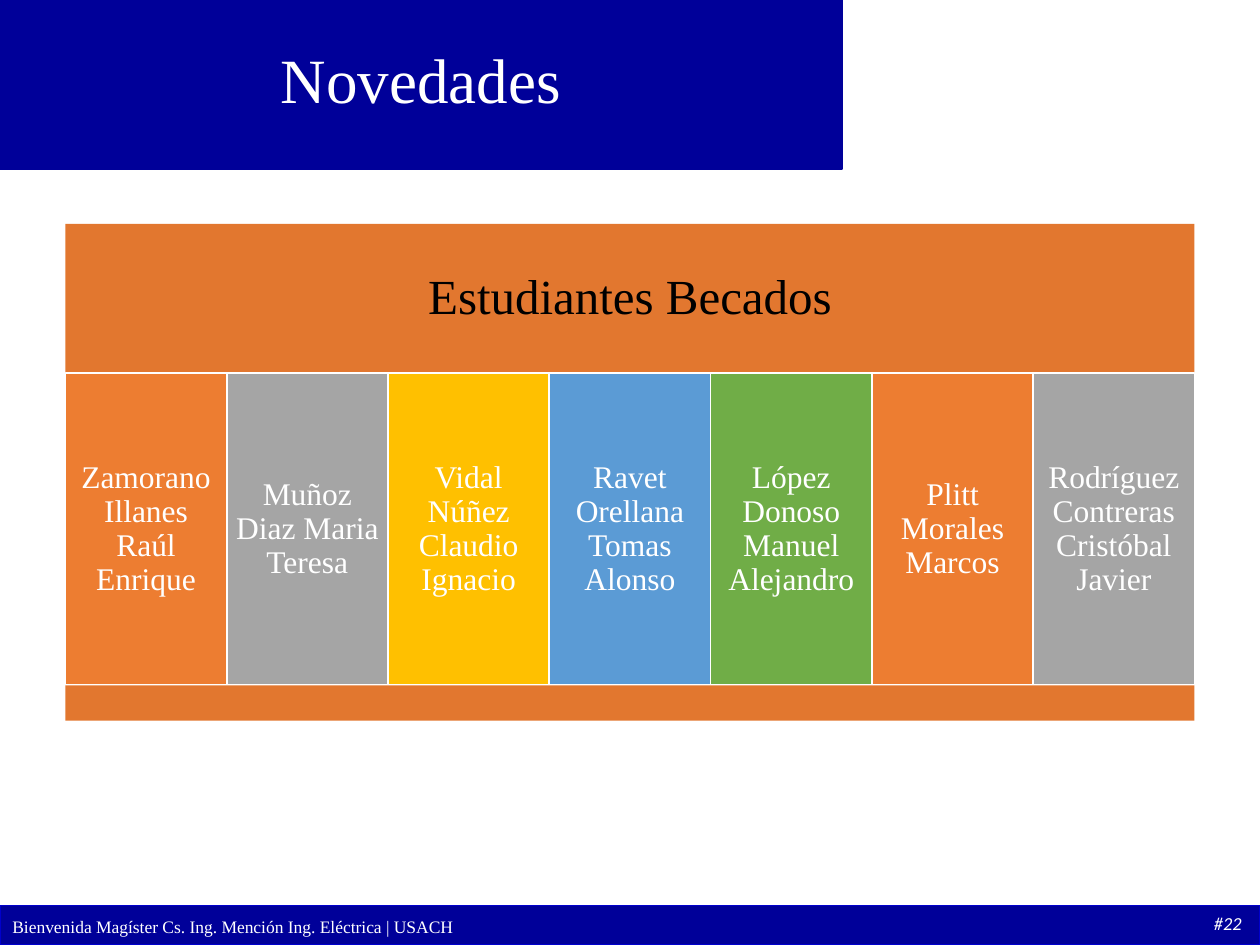
from pptx import Presentation
from pptx.dml.color import RGBColor
from pptx.enum.shapes import MSO_SHAPE
from pptx.enum.text import MSO_ANCHOR, PP_ALIGN
from pptx.util import Pt

RECTANGLE = MSO_SHAPE.RECTANGLE
TOP, MIDDLE = MSO_ANCHOR.TOP, MSO_ANCHOR.MIDDLE
LEFT, CENTER = PP_ALIGN.LEFT, PP_ALIGN.CENTER

NAVY, BLUE, WHITE, BLACK = "000099", "0000CC", "FFFFFF", "000000"
HEADER_ORANGE = "E2772F"
COLUMN_COLORS = ["ED7D31", "A5A5A5", "FFC000", "5B9BD5", "70AD47"]

TITLE = "Novedades"
HEADING = "Estudiantes Becados"
STUDENTS = [
    "Zamorano Illanes Raúl Enrique",
    "Muñoz Diaz Maria Teresa",
    "Vidal Núñez Claudio Ignacio",
    "Ravet Orellana Tomas Alonso",
    "López Donoso Manuel Alejandro",
    "Plitt Morales Marcos",
    "Rodríguez Contreras Cristóbal Javier",
]
FOOTER = "Bienvenida Magíster Cs. Ing. Mención Ing. Eléctrica | USACH"
PAGE_NUMBER = "#22"

SLIDE_WIDTH, SLIDE_HEIGHT = 720, 540
TITLE_WIDTH, TITLE_HEIGHT = 481, 94.5
BAND_HEIGHT, FOOTER_TOP = 96.5, 517.5
PANEL_LEFT, PANEL_WIDTH = 37.4, 645.2
HEADING_TOP, COLUMNS_TOP, BASE_TOP, PANEL_BOTTOM = 128, 213.2, 391.6, 411.8


def rgb(hex_color):
    return RGBColor.from_string(hex_color)


def add_box(slide, left, top, width, height, fill, line=None):
    box = slide.shapes.add_shape(
        RECTANGLE, Pt(left), Pt(top), Pt(width), Pt(height))
    box.shadow.inherit = False
    box.fill.solid()
    box.fill.fore_color.rgb = rgb(fill)
    if line:
        box.line.color.rgb = rgb(line)
        box.line.width = Pt(1)
    else:
        box.line.fill.background()
    return box


def write(shape, text, *, size, color=WHITE, font="Times New Roman", italic=False,
          align=CENTER, anchor=MIDDLE, spacing=0.9, inset=None, wrap=True):
    frame = shape.text_frame
    frame.word_wrap = wrap
    frame.vertical_anchor = anchor
    if inset is not None:
        frame.margin_left = frame.margin_right = Pt(inset)
        frame.margin_top = frame.margin_bottom = Pt(inset)
    paragraph = frame.paragraphs[0]
    paragraph.alignment = align
    paragraph.line_spacing = spacing
    run = paragraph.add_run()
    run.text = text
    run.font.size = Pt(size)
    run.font.name = font
    run.font.italic = italic
    run.font.color.rgb = rgb(color)


def add_title(slide):
    title = slide.shapes.title
    title.left, title.top = Pt(0), Pt(0)
    title.width, title.height = Pt(TITLE_WIDTH), Pt(TITLE_HEIGHT)
    write(title, TITLE, size=36)
    band = add_box(slide, 0, 0, TITLE_WIDTH, BAND_HEIGHT, NAVY, NAVY)
    title.element.addprevious(band.element)  # the band lies behind the title


def add_footer(slide):
    add_box(slide, 0, FOOTER_TOP, SLIDE_WIDTH, SLIDE_HEIGHT - FOOTER_TOP, NAVY, BLUE)
    footer = slide.shapes.add_textbox(Pt(0), Pt(520), Pt(664.6), Pt(19.4))
    write(footer, FOOTER, size=10, align=LEFT, anchor=TOP, spacing=1)
    number = slide.shapes.add_textbox(Pt(686.6), Pt(517.7), Pt(38), Pt(20))
    write(number, PAGE_NUMBER, size=10.5, font="Calibri", italic=True,
          align=LEFT, anchor=TOP, spacing=1, wrap=False)


def add_students(slide):
    heading = add_box(slide, PANEL_LEFT, HEADING_TOP, PANEL_WIDTH,
                      COLUMNS_TOP - HEADING_TOP, HEADER_ORANGE)
    write(heading, HEADING, size=28, color=BLACK, inset=8.6)
    column_width = PANEL_WIDTH / len(STUDENTS)
    for index, student in enumerate(STUDENTS):
        column = add_box(slide, PANEL_LEFT + index * column_width, COLUMNS_TOP,
                         column_width, BASE_TOP - COLUMNS_TOP,
                         COLUMN_COLORS[index % len(COLUMN_COLORS)], WHITE)
        write(column, student, size=18, inset=5)
    add_box(slide, PANEL_LEFT, BASE_TOP, PANEL_WIDTH,
            PANEL_BOTTOM - BASE_TOP, HEADER_ORANGE)


def main():
    presentation = Presentation()
    presentation.slide_width = Pt(SLIDE_WIDTH)
    presentation.slide_height = Pt(SLIDE_HEIGHT)
    slide = presentation.slides.add_slide(presentation.slide_layouts[5])
    add_title(slide)
    add_footer(slide)
    add_students(slide)
    presentation.save("out.pptx")


if __name__ == "__main__":
    main()
